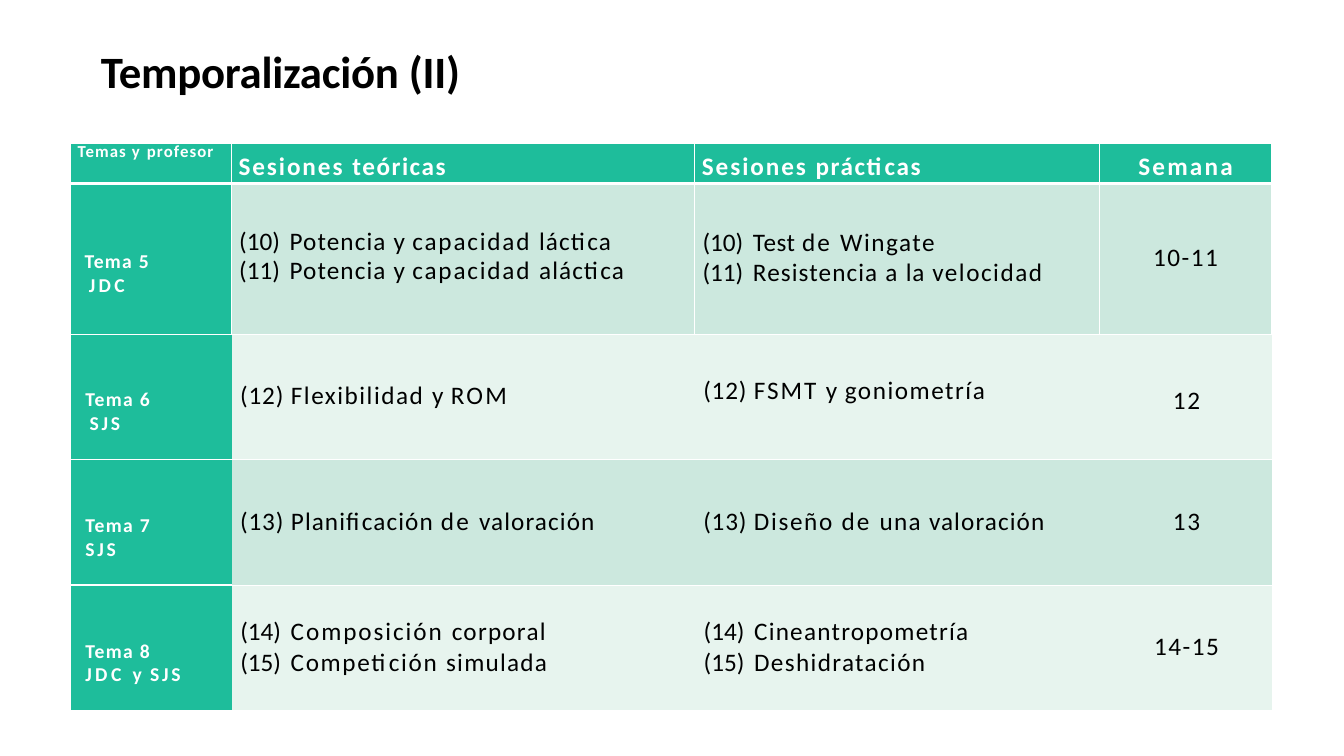
from pptx import Presentation
from pptx.dml.color import RGBColor
from pptx.enum.text import PP_ALIGN as Align
from pptx.oxml.ns import qn
from pptx.util import Pt
from lxml.etree import SubElement


def color(hex_code):
    return RGBColor.from_string(hex_code)


def add_words(paragraph, words, size, bold, hex_code):
    """Add (text, letter spacing in points) pairs as runs."""
    for text, spacing in words:
        run = paragraph.add_run()
        run.text = text
        run.font.name = "Calibri"
        run.font.size = Pt(size)
        run.font.bold = bold
        run.font.color.rgb = color(hex_code)
        run._r.get_or_add_rPr().set("spc", str(round(spacing * 100)))


GREEN, MINT, PALE, WHITE, BLACK = "1EBD9B", "CCE8DE", "E7F4EE", "FFFFFF", "000000"

presentation = Presentation()
presentation.slide_width, presentation.slide_height = Pt(960), Pt(540)
slide = presentation.slides.add_slide(presentation.slide_layouts[6])

# Title
title = slide.shapes.add_textbox(Pt(72), Pt(30.2), Pt(262), Pt(40.3)).text_frame
title.word_wrap = True
title.margin_left = title.margin_right = title.margin_bottom = 0
title.margin_top = Pt(1)
add_words(title.paragraphs[0], [("Temporalización ", -0.2), ("(II)", -0.1)], 32, True, BLACK)

# Schedule: each cell is (top margin, left indent, first number or None, lines of words)
schedule = [
    [
        (0, 5, None, [[("Temas ", 0.8), ("y ", 1.1), ("profesor", 0.8)]]),
        (6.3, 5, None, [[("Sesiones ", 1.4), ("teóricas", 1.1)]]),
        (6.3, 5, None, [[("Sesiones ", 1.4), ("prácticas", 1.1)]]),
        (6.3, 0, None, [[("Semana", 1.6)]]),
    ],
    [
        (47.5, 10, None, [[("Tema ", 0.9), ("5", 1.9)], [("JDC", 2.4)]]),
        (31.6, 41.5, 10, [
            [("Potencia ", 0.8), ("y ", 0.6), ("capacidad ", 1.3), ("láctica", 0.8)],
            [("Potencia ", 0.8), ("y ", 0.6), ("capacidad ", 1.3), ("aláctica", 0.8)]]),
        (31.2, 41.5, 10, [
            [("Test ", 0.4), ("de ", 1.6), ("Wingate", 1.1)],
            [("Resistencia ", 0.8), ("a ", 0.9), ("la ", 0.7), ("velocidad", 1.1)]]),
        (42.2, 0, None, [[("10-11", 1.1)]]),
    ],
    [
        (38.6, 10.6, None, [[("Tema ", 0.9), ("6", 1.9)], [("SJS", 2)]]),
        (32.8, 6.2, None, [[("(12) ", 0.6), ("Flexibilidad ", 1.1), ("y ", 0.6), ("ROM", 1.6)]]),
        (29.3, 6, None, [[("(12) ", 0.6), ("FSMT ", 1.4), ("y ", 0.6), ("goniometría", 1.1)]]),
        (36.8, 1.4, None, [[("12", 1.2)]]),
    ],
    [
        (39, 10.6, None, [[("Tema ", 0.9), ("7", 1.9)], [("SJS", 2)]]),
        (33.3, 6.2, None, [[("(13) ", 0.6), ("Planificación ", 0.8), ("de ", 1.6),
                            ("valoración", 0.8)]]),
        (33.3, 6, None, [[("(13) ", 0.6), ("Diseño ", 1.2), ("de ", 1.6), ("una ", 0.9),
                          ("valoración", 0.8)]]),
        (33.3, 1.4, None, [[("13", 1.2)]]),
    ],
    [
        (38.8, 10.6, None, [[("Tema ", 0.9), ("8", 1.9)],
                            [("JDC ", 2.4), ("y ", 1.3), ("SJS", 2)]]),
        (22.4, 42.3, 14, [[("Composición ", 1.4), ("corporal", 0.9)],
                          [("Competición ", 1.2), ("simulada", 0.9)]]),
        (22.4, 42.3, 14, [[("Cineantropometría", 0.9)], [("Deshidratación", 1)]]),
        (33.2, 1.4, None, [[("14-15", 1.1)]]),
    ],
]
column_widths = [115, 331, 289, 123]
row_heights = [28.8, 107.8, 89.6, 89.6, 89.6]
rules = [1, 3, 1, 0.5, 0.5, 1]  # horizontal line widths, top to bottom
row_fills = [GREEN, MINT, PALE, MINT, PALE]

table = slide.shapes.add_table(
    len(row_heights), len(column_widths), Pt(50.4), Pt(102.2),
    Pt(sum(column_widths)), Pt(sum(row_heights))).table
table.first_row = table.horz_banding = False
for column, width in zip(table.columns, column_widths):
    column.width = Pt(width)

for r, (row, height) in enumerate(zip(schedule, row_heights)):
    table.rows[r].height = Pt(height)
    for c, (top, indent, first_number, lines) in enumerate(row):
        cell = table.cell(r, c)
        cell.margin_left = cell.margin_right = cell.margin_bottom = 0
        cell.margin_top = Pt(top)
        is_header, is_topic = r == 0, c == 0

        # Cell borders: the lower rows have no vertical lines between sessions
        sides = {
            "a:lnL": 1 if r < 2 or is_topic else 0,
            "a:lnR": 1 if r < 2 else 0,
            "a:lnT": 1 if is_topic and r > 1 else rules[r],
            "a:lnB": 1 if is_topic and r > 0 else rules[r + 1],
        }
        for side, width in sides.items():
            line = SubElement(cell._tc.get_or_add_tcPr(), qn(side), w=str(Pt(width)))
            if width:
                SubElement(SubElement(line, qn("a:solidFill")), qn("a:srgbClr"), val=WHITE)
            else:
                SubElement(line, qn("a:noFill"))
        cell.fill.solid()
        cell.fill.fore_color.rgb = color(GREEN if is_topic else row_fills[r])

        # Cell text
        size = (12 if is_header else 14) if is_topic else 18
        strong = is_header or is_topic
        for i, words in enumerate(lines):
            paragraph = cell.text_frame.paragraphs[0] if i == 0 else cell.text_frame.add_paragraph()
            paragraph.alignment = Align.CENTER if c == 3 else Align.LEFT
            if is_header:
                paragraph.line_spacing = Pt(13.9 if is_topic else 21.5)
            elif (r, c) == (1, 1):
                paragraph.line_spacing = Pt(20.9)
            settings = paragraph._p.get_or_add_pPr()
            # The teacher's initials sit slightly further in on the first two topics
            shift = 3 if is_topic and i == 1 and r < 3 else 0
            settings.set("marL", str(Pt(indent + shift)))
            settings.set("indent", str(Pt(-36 if first_number else 0)))
            if first_number:
                SubElement(settings, qn("a:buAutoNum"), type="arabicParenBoth",
                           startAt=str(first_number))
            add_words(paragraph, words, size, strong, WHITE if strong else BLACK)

presentation.save("out.pptx")
